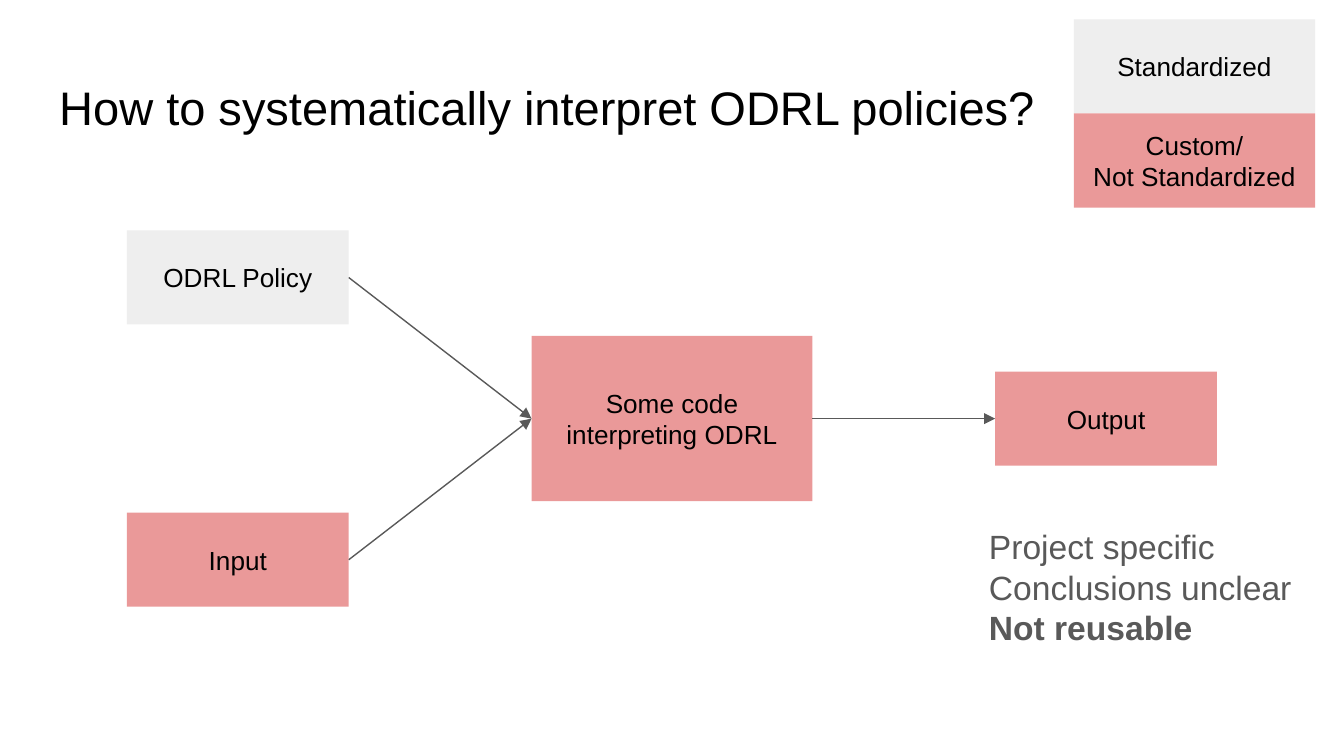
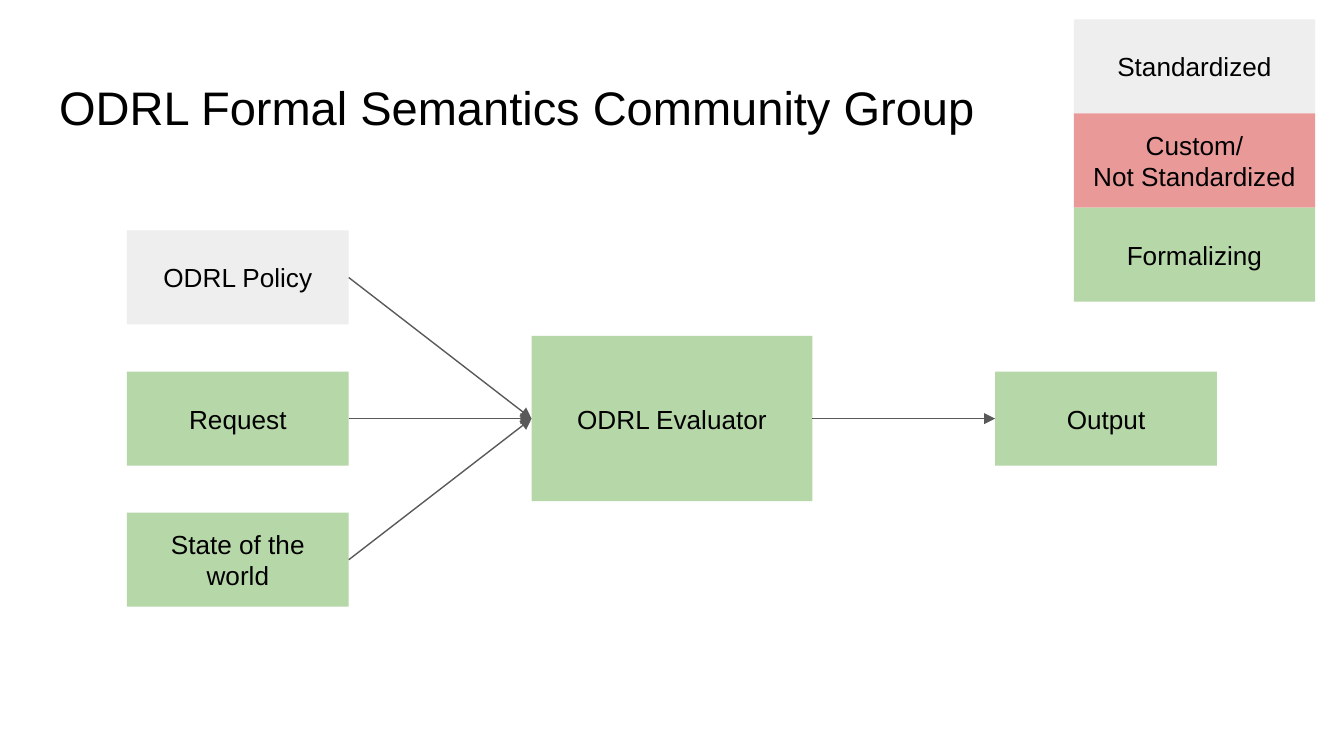
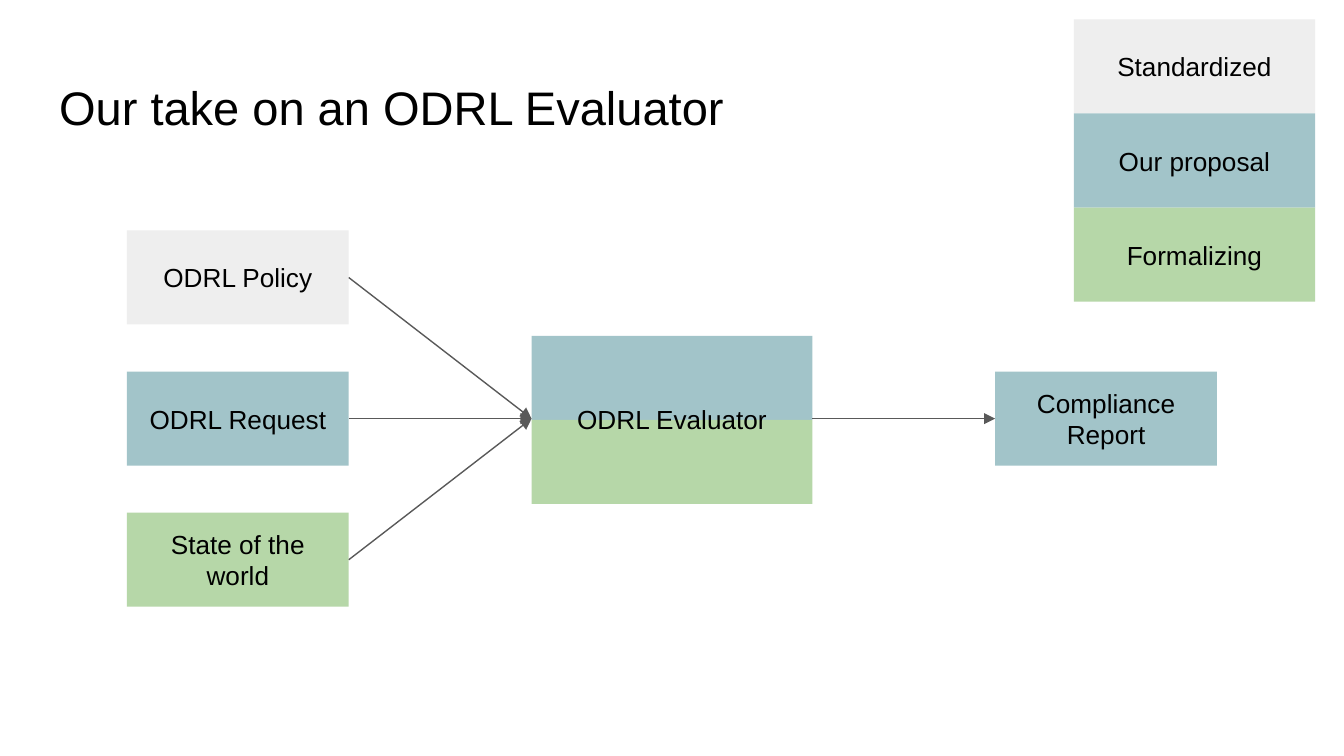
"""Build three slides on interpreting ODRL policies as flow diagrams."""
from dataclasses import dataclass

from lxml import etree
from pptx import Presentation
from pptx import util as u
from pptx.dml.color import RGBColor
from pptx.enum import shapes, text
from pptx.oxml.ns import qn

PX = 4572
FONT = "Arial"
COLORS = {
    "standard": "EEEEEE",
    "custom": "EA9999",
    "formal": "B6D7A8",
    "proposal": "A2C4C9",
    "ink": "000000",
    "grey": "595959",
}
SLIDE = (2000, 1125)
INSET = 20
BOX_W, BOX_H = 330, 140
INPUT_X, INPUT_Y, INPUT_STEP = 189, 343, 210
ENGINE = (791, 500, 418, 246)
BAND_H = 125
OUTPUT = (1481, INPUT_Y + INPUT_STEP, BOX_W, BOX_H)
LEGEND_X, LEGEND_Y, LEGEND_W = 1598, 29, 359
TITLE = (68, 97, 1864, 126)
REMARKS = (1452, 763, 542, 246)
LEFT_SITE, RIGHT_SITE = 1, 3


@dataclass(frozen=True)
class Node:
    """A labelled box in one category, placed in a row of its column."""
    label: str
    kind: str
    row: int = 0


@dataclass(frozen=True)
class Flow:
    """One slide: inputs feed an engine of one or more colours, giving an output."""
    title: str
    inputs: tuple[Node, ...]
    engine: str
    engine_kinds: tuple[str, ...]
    output: Node
    legend: tuple[Node, ...]
    remarks: tuple[str, ...] = ()


STANDARD = Node("Standardized", "standard")
CUSTOM = Node("Custom/\nNot Standardized", "custom", 1)
FORMAL = Node("Formalizing", "formal", 2)
POLICY = Node("ODRL Policy", "standard")
WORLD = Node("State of the world", "formal", 2)

FLOWS = (
    Flow("How to systematically interpret ODRL policies?",
         (POLICY, Node("Input", "custom", 2)),
         "Some code interpreting ODRL", ("custom",),
         Node("Output", "custom"),
         (STANDARD, CUSTOM),
         ("Project specific", "Conclusions unclear", "Not reusable")),
    Flow("ODRL Formal Semantics Community Group",
         (POLICY, Node("Request", "formal", 1), WORLD),
         "ODRL Evaluator", ("formal",),
         Node("Output", "formal"),
         (STANDARD, CUSTOM, FORMAL)),
    Flow("Our take on an ODRL Evaluator",
         (POLICY, Node("ODRL Request", "proposal", 1), WORLD),
         "ODRL Evaluator", ("proposal", "formal"),
         Node("Compliance Report", "proposal"),
         (STANDARD, Node("Our proposal", "proposal", 1), FORMAL)),
)


def rgb(name: str) -> RGBColor:
    """Look up a named colour."""
    return RGBColor.from_string(COLORS[name])


def emu(*px: int) -> list[u.Emu]:
    """Turn px lengths into EMU."""
    return [u.Emu(n * PX) for n in px]


def setup_frame(tf, anchor) -> None:
    """Give a text frame its insets, wrapping and anchor."""
    tf.word_wrap = True
    tf.auto_size = text.MSO_AUTO_SIZE.NONE
    tf.vertical_anchor = anchor
    tf.margin_left, tf.margin_top, tf.margin_right, tf.margin_bottom = emu(*[INSET] * 4)


def add_run(p, words: str, size: float, color: str = "ink", bold: bool = False) -> None:
    """Append one formatted run to a paragraph."""
    r = p.add_run()
    r.text = words
    r.font.name = FONT
    r.font.size = u.Pt(size)
    r.font.bold = bold
    r.font.color.rgb = rgb(color)


def add_label(sp, label: str) -> None:
    """Centre a label in a shape, breaking lines where it says so."""
    setup_frame(sp.text_frame, text.MSO_ANCHOR.MIDDLE)
    p = sp.text_frame.paragraphs[0]
    p.alignment = text.PP_ALIGN.CENTER
    for i, line in enumerate(label.split("\n")):
        if i:
            p.add_line_break()
        add_run(p, line, 14)


def add_box(s, area: tuple[int, int, int, int], kind: str, label: str = ""):
    """Draw a plain filled rectangle with an optional label."""
    sp = s.shapes.add_shape(shapes.MSO_SHAPE.RECTANGLE, *emu(*area))
    sp.shadow.inherit = False
    sp.fill.solid()
    sp.fill.fore_color.rgb = rgb(kind)
    sp.line.fill.background()
    if label:
        add_label(sp, label)
    return sp


def add_arrow(s, start, end) -> None:
    """Join the right side of one shape to the left side of another."""
    cx = s.shapes.add_connector(shapes.MSO_CONNECTOR.STRAIGHT, 0, 0, 0, 0)
    cx.begin_connect(start, RIGHT_SITE)
    cx.end_connect(end, LEFT_SITE)
    cx.line.color.rgb = rgb("grey")
    cx.line.width = u.Pt(0.75)
    sp_pr = cx._element.spPr
    etree.SubElement(sp_pr.find(qn("a:ln")), qn("a:tailEnd"), type="triangle")
    etree.SubElement(sp_pr, qn("a:effectLst"))


def add_title(s, title: str) -> None:
    """Place and format the title placeholder."""
    sp = s.shapes.title
    sp.left, sp.top, sp.width, sp.height = emu(*TITLE)
    setup_frame(sp.text_frame, text.MSO_ANCHOR.TOP)
    p = sp.text_frame.paragraphs[0]
    p.alignment = text.PP_ALIGN.LEFT
    add_run(p, title, 25.2)


def add_engine(s, flow: Flow):
    """Draw the central box, split into equal bands when it has several kinds."""
    if len(flow.engine_kinds) == 1:
        return add_box(s, ENGINE, flow.engine_kinds[0], flow.engine)
    x, y, w, _ = ENGINE
    for i, kind in enumerate(flow.engine_kinds):
        add_box(s, (x, y + i * BAND_H, w, BAND_H), kind)
    sp = s.shapes.add_textbox(*emu(*ENGINE))
    add_label(sp, flow.engine)
    return sp


def add_remarks(s, lines: tuple[str, ...]) -> None:
    """Write the remarks under the output, the last one in bold."""
    tf = s.shapes.add_textbox(*emu(*REMARKS)).text_frame
    setup_frame(tf, text.MSO_ANCHOR.TOP)
    for i, line in enumerate(lines):
        p = tf.add_paragraph() if i else tf.paragraphs[0]
        add_run(p, line, 18, "grey", bold=i == len(lines) - 1)


def add_flow(prs, flow: Flow) -> None:
    """Build one slide from its flow."""
    s = prs.slides.add_slide(prs.slide_layouts[5])
    add_title(s, flow.title)
    engine = add_engine(s, flow)
    for node in flow.inputs:
        area = (INPUT_X, INPUT_Y + node.row * INPUT_STEP, BOX_W, BOX_H)
        add_arrow(s, add_box(s, area, node.kind, node.label), engine)
    add_arrow(s, engine, add_box(s, OUTPUT, flow.output.kind, flow.output.label))
    for node in flow.legend:
        area = (LEGEND_X, LEGEND_Y + node.row * BOX_H, LEGEND_W, BOX_H)
        add_box(s, area, node.kind, node.label)
    if flow.remarks:
        add_remarks(s, flow.remarks)


def main() -> None:
    """Create and save the presentation."""
    prs = Presentation()
    prs.slide_width, prs.slide_height = emu(*SLIDE)
    for flow in FLOWS:
        add_flow(prs, flow)
    prs.save("out.pptx")


if __name__ == "__main__":
    main()
